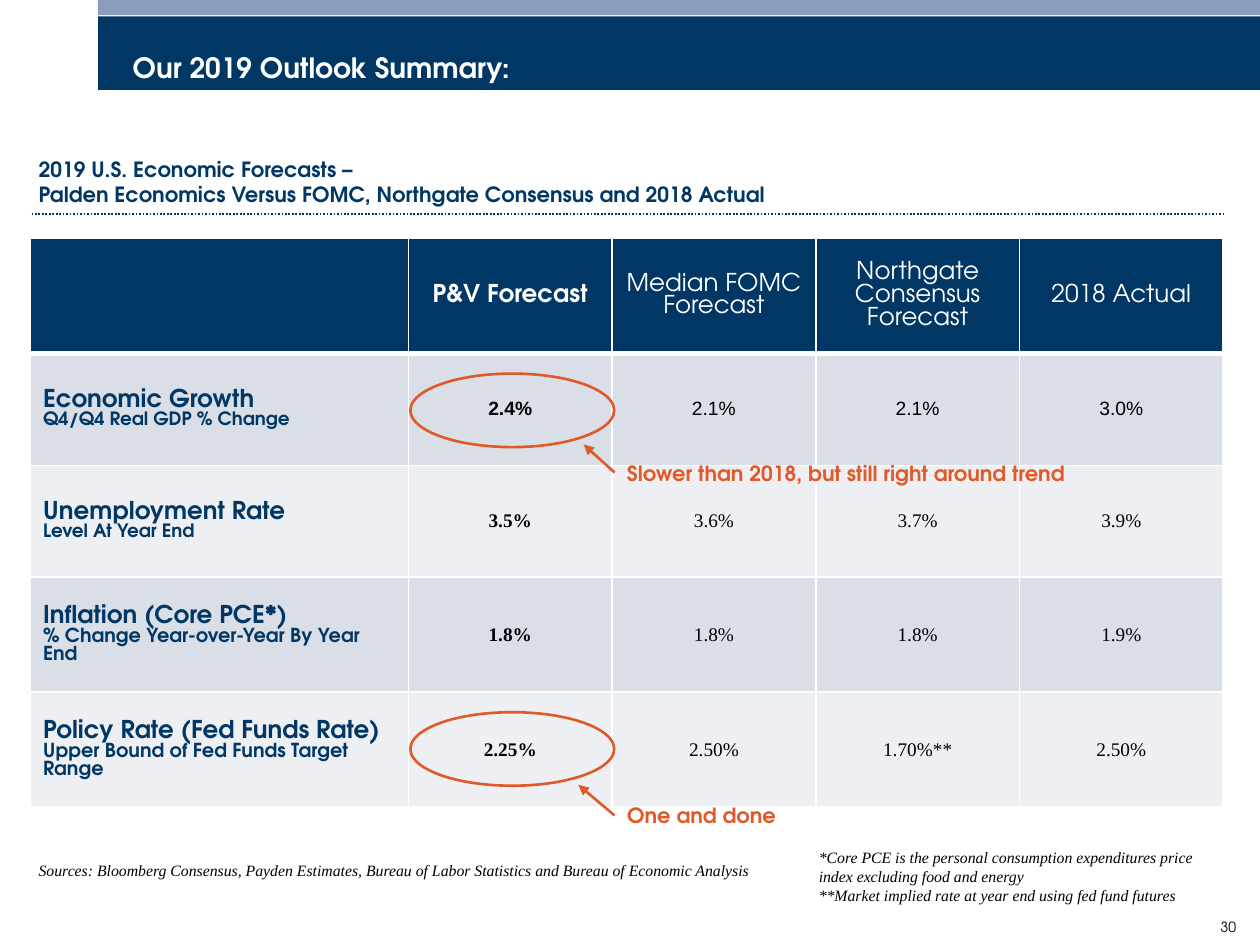
from lxml import etree
from pptx import Presentation
from pptx.dml.color import RGBColor
from pptx.enum.dml import MSO_LINE
from pptx.enum.shapes import MSO_CONNECTOR, MSO_SHAPE
from pptx.enum.text import MSO_ANCHOR, MSO_AUTO_SIZE, PP_ALIGN
from pptx.oxml.ns import qn
from pptx.util import Pt

LEFT, CENTER, RIGHT = PP_ALIGN.LEFT, PP_ALIGN.CENTER, PP_ALIGN.RIGHT
TOP, MIDDLE, BOTTOM = MSO_ANCHOR.TOP, MSO_ANCHOR.MIDDLE, MSO_ANCHOR.BOTTOM
RECT, OVAL = MSO_SHAPE.RECTANGLE, MSO_SHAPE.OVAL
STRAIGHT, DOTTED = MSO_CONNECTOR.STRAIGHT, MSO_LINE.ROUND_DOT
NO_AUTOFIT = MSO_AUTO_SIZE.NONE

NAVY, ORANGE, WHITE, BLACK = "003764", "E05929", "FFFFFF", "000000"
BANDS = ["DADFE7", "EEEFF3"]
HEAD, SERIF, SANS = "TeX Gyre Adventor", "Times New Roman", "Arial"

COLUMNS = ["P&V Forecast", "Median FOMC Forecast", "Northgate Consensus Forecast", "2018 Actual"]
ROWS = [
    ("Economic Growth", "Q4/Q4 Real GDP % Change", 10.5, SANS, ["2.4%", "2.1%", "2.1%", "3.0%"]),
    ("Unemployment Rate", "Level At Year End", 10.5, SERIF, ["3.5%", "3.6%", "3.7%", "3.9%"]),
    ("Inflation (Core PCE*)", "% Change Year-over-Year By Year End", 11, SERIF,
     ["1.8%", "1.8%", "1.8%", "1.9%"]),
    ("Policy Rate (Fed Funds Rate)", "Upper Bound of Fed Funds Target Range", 11, SERIF,
     ["2.25%", "2.50%", "1.70%**", "2.50%"]),
]
COL_WIDTHS = [216] + [116.4] * 4
ROW_HEIGHTS = [65.7, 64, 64, 65.7, 65.7]


def rgb(value):
    return RGBColor.from_string(value)


def write(tf, text, size=12, font=HEAD, color=BLACK, bold=False, italic=False,
          align=LEFT, first=True):
    for i, line in enumerate(text.split("\n")):
        p = tf.paragraphs[0] if first and i == 0 else tf.add_paragraph()
        p.alignment = align
        p.space_before = Pt(0)
        r = p.add_run()
        r.text = line
        r.font.size, r.font.name = Pt(size), font
        r.font.bold, r.font.italic = bold, italic
        r.font.color.rgb = rgb(color)


class Deck:
    def __init__(self):
        self.prs = Presentation()
        self.prs.slide_width, self.prs.slide_height = Pt(720), Pt(540)
        self.s = self.prs.slides.add_slide(self.prs.slide_layouts[5])

    def title(self, text, x, y, w, h):
        sp = self.s.shapes.title
        sp.left, sp.top, sp.width, sp.height = Pt(x), Pt(y), Pt(w), Pt(h)
        sp.fill.solid()
        sp.fill.fore_color.rgb = rgb(NAVY)
        tf = sp.text_frame
        tf.auto_size, tf.vertical_anchor = NO_AUTOFIT, BOTTOM
        tf.margin_left = Pt(6.8)
        tf.margin_top = tf.margin_right = Pt(3)
        tf.margin_bottom = Pt(3.5)
        write(tf, text, size=16, color=WHITE, bold=True)
        tf.paragraphs[0]._p.get_or_add_pPr().set("marL", str(Pt(13)))

    def shape(self, kind, x, y, w, h, fill=None, line=None):
        sp = self.s.shapes.add_shape(kind, Pt(x), Pt(y), Pt(w), Pt(h))
        sp.shadow.inherit = False
        if fill:
            sp.fill.solid()
            sp.fill.fore_color.rgb = rgb(fill)
        else:
            sp.fill.background()
        if line:
            sp.line.color.rgb, sp.line.width = rgb(line), Pt(1.5)
        else:
            sp.line.fill.background()

    def text(self, text, x, y, w, h, wrap=True, anchor=TOP, **fmt):
        tf = self.s.shapes.add_textbox(Pt(x), Pt(y), Pt(w), Pt(h)).text_frame
        tf.word_wrap, tf.vertical_anchor = wrap, anchor
        write(tf, text, **fmt)

    def line(self, x1, y1, x2, y2, color, width, dash=None, arrow=False):
        c = self.s.shapes.add_connector(STRAIGHT, Pt(x1), Pt(y1), Pt(x2), Pt(y2))
        c.line.color.rgb, c.line.width = rgb(color), Pt(width)
        if dash:
            c.line.dash_style = dash
        if arrow:
            etree.SubElement(c.line._get_or_add_ln(), qn("a:tailEnd"), type="triangle")
        etree.SubElement(c._element.spPr, qn("a:effectLst"))

    def cell(self, cell, fill, bottom=1):
        tcPr = cell._tc.get_or_add_tcPr()
        for side, width in (("lnL", 1), ("lnR", 1), ("lnT", 1), ("lnB", bottom)):
            ln = etree.SubElement(tcPr, qn("a:" + side), w=str(Pt(width)))
            solid = etree.SubElement(ln, qn("a:solidFill"))
            etree.SubElement(solid, qn("a:srgbClr"), val=WHITE)
        cell.fill.solid()
        cell.fill.fore_color.rgb = rgb(fill)
        cell.vertical_anchor = MIDDLE
        return cell.text_frame

    def table(self, x, y):
        table = self.s.shapes.add_table(len(ROW_HEIGHTS), len(COL_WIDTHS), Pt(x), Pt(y),
                                        Pt(sum(COL_WIDTHS)), Pt(sum(ROW_HEIGHTS))).table
        for col, width in zip(table.columns, COL_WIDTHS):
            col.width = Pt(width)
        for row, height in zip(table.rows, ROW_HEIGHTS):
            row.height = Pt(height)
        self.cell(table.cell(0, 0), NAVY, bottom=3)
        for j, name in enumerate(COLUMNS, 1):
            write(self.cell(table.cell(0, j), NAVY, bottom=3), name, size=14,
                  color=WHITE, bold=j == 1, align=CENTER)
        for i, (name, detail, size, font, values) in enumerate(ROWS, 1):
            fill = BANDS[(i - 1) % 2]
            tf = self.cell(table.cell(i, 0), fill)
            write(tf, name, size=14, color=NAVY, bold=True)
            write(tf, detail, size=size, color=NAVY, bold=True, first=False)
            for j, value in enumerate(values, 1):
                write(self.cell(table.cell(i, j), fill), value, size=11, font=font,
                      bold=j == 1, align=CENTER)

    def callout(self, text, oval_y, arrow_from_y, tip_x, tip_y, text_y, text_w):
        self.shape(OVAL, 234.5, oval_y, 116.5, 42, line=ORANGE)
        self.line(351.2, arrow_from_y, tip_x, tip_y, ORANGE, 1.5, arrow=True)
        self.text(text, 351.2, text_y, text_w, 21.5, wrap=False, color=ORANGE, bold=True)


def main():
    deck = Deck()
    deck.shape(RECT, 56, 0, 664, 8.7, fill="8C9DBC")
    deck.title("Our 2019 Outlook Summary:", 56, 9.4, 664, 42)
    deck.text("30", 681, 519.7, 32.5, 20, anchor=MIDDLE, size=8, align=RIGHT)
    deck.text("Sources: Bloomberg Consensus, Payden Estimates, Bureau of Labor Statistics "
              "and Bureau of Economic Analysis", 15, 488.4, 463, 18,
              size=9, font=SERIF, italic=True)
    deck.text("*Core PCE is the personal consumption expenditures price index excluding "
              "food and energy\n**Market implied rate at year end using fed fund futures",
              460.8, 481, 238, 51, size=9, font=SERIF, italic=True)
    deck.text("2019 U.S. Economic Forecasts –\n"
              "Palden Economics Versus FOMC, Northgate Consensus and 2018 Actual",
              15, 86, 692, 36, color=NAVY, bold=True)
    deck.line(18, 122.4, 699, 122.4, NAVY, 1, dash=DOTTED)
    deck.table(17.4, 136.2)
    deck.callout("One and done", 407, 466, 330.5, 448.5, 455, 101)
    deck.callout("Slower than 2018, but still right around trend",
                 213.5, 270, 333.5, 254, 259.5, 272)
    deck.prs.save("out.pptx")


if __name__ == "__main__":
    main()
